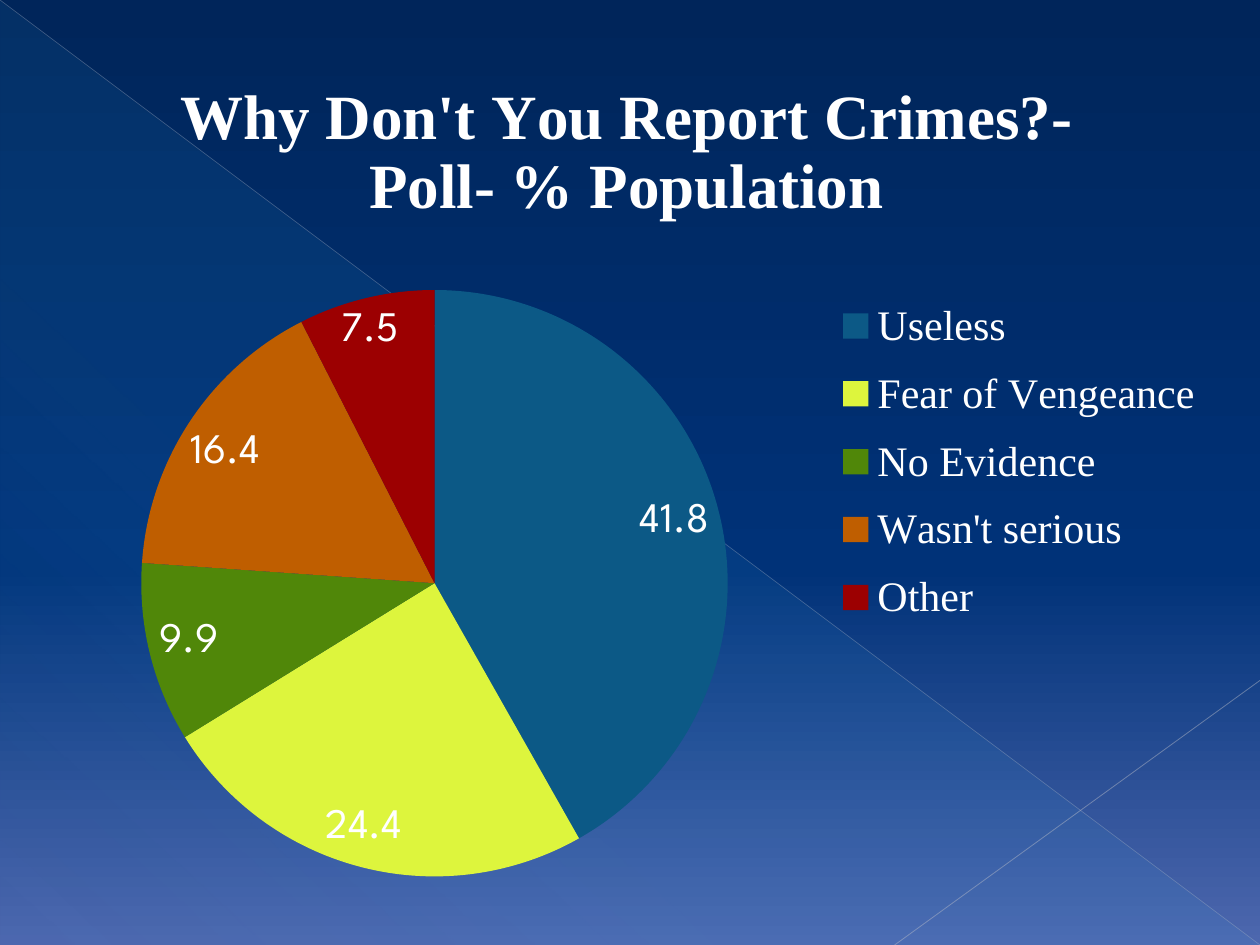
from dataclasses import dataclass
from typing import NamedTuple

from lxml.etree import SubElement
from pptx import Presentation
from pptx.chart.chart import Chart
from pptx.chart.data import CategoryChartData
from pptx.dml.color import RGBColor
from pptx.enum.chart import XL_CHART_TYPE, XL_LABEL_POSITION, XL_LEGEND_POSITION
from pptx.enum.shapes import MSO_CONNECTOR, MSO_SHAPE
from pptx.oxml.ns import qn
from pptx.slide import Slide
from pptx.util import Inches, Pt

WIDTH, HEIGHT = Inches(10), Inches(7.5)


@dataclass(frozen=True)
class Theme:
    text: str = "FFFFFF"
    body_font: str = "League Spartan"
    serif_font: str = "Times New Roman"
    title_size: int = 36
    label_size: int = 24
    base_size: int = 10


class Stop(NamedTuple):
    position: int
    color: str
    opacity: int = 100


class Ray(NamedTuple):
    """A thin line whose ends are shares of the slide."""
    start: tuple[float, float]
    end: tuple[float, float]
    color: str
    weight: float
    opacity: int


class Answer(NamedTuple):
    name: str
    percent: float
    color: str


class Area(NamedTuple):
    """A place given in shares of the chart; no size means automatic."""
    left: float
    top: float
    width: float | None = None
    height: float | None = None


THEME = Theme()
BACKGROUND = [Stop(0, "00255A"), Stop(60, "003278"), Stop(100, "4D67AE")]
TRIANGLE = [Stop(0, "38ABED", 10), Stop(70, "38ABED", 8), Stop(100, "38ABED", 1)]
RAYS = [
    Ray((0, 0), (1, 1), "B0B5C3", 0.39, 35),
    Ray((1, 0.72), (0.71, 1), "B9BDC9", 0.47, 45),
]
ANSWERS = [
    Answer("Useless", 41.8, "0C5986"),
    Answer("Fear of Vengeance", 24.4, "DDF53D"),
    Answer("No Evidence", 9.9, "508709"),
    Answer("Wasn't serious", 16.4, "BF5E00"),
    Answer("Other", 7.5, "9C0001"),
]
TITLE = "Why Don't You Report Crimes?- Poll- % Population"
TITLE_AREA = Area(0.11, 0.01)
PLOT_AREA = Area(0.08, 0.28, 0.51, 0.7)
LEGEND_AREA = Area(0.67, 0.27, 0.32, 0.43)


def add_opacity(color_element, opacity: int) -> None:
    if opacity < 100:
        SubElement(color_element, qn("a:alpha"), val=str(opacity * 1000))


def set_gradient(fill, stops: list[Stop], clockwise_angle: int) -> None:
    """Give a fill any number of stops, each with its own opacity."""
    fill.gradient()
    fill.gradient_angle = (360 - clockwise_angle) % 360
    # The stop collection has no public way to add stops.
    stop_list = fill.gradient_stops[0]._gs.getparent()
    for element in list(stop_list):
        stop_list.remove(element)
    for stop in stops:
        element = SubElement(stop_list, qn("a:gs"), pos=str(stop.position * 1000))
        color = SubElement(element, qn("a:srgbClr"), val=stop.color)
        add_opacity(color, stop.opacity)


def set_font(font, size: int, name: str, bold: bool = False) -> None:
    font.size = Pt(size)
    font.name = name
    font.bold = bold
    font.color.rgb = RGBColor.from_string(THEME.text)


def add_ray(slide: Slide, ray: Ray) -> None:
    (start_x, start_y), (end_x, end_y) = ray.start, ray.end
    connector = slide.shapes.add_connector(
        MSO_CONNECTOR.STRAIGHT,
        round(WIDTH * start_x), round(HEIGHT * start_y),
        round(WIDTH * end_x), round(HEIGHT * end_y),
    )
    connector.line.width = Pt(ray.weight)
    connector.line.color.rgb = RGBColor.from_string(ray.color)
    properties = connector._element.spPr
    add_opacity(properties.find(".//" + qn("a:srgbClr")), ray.opacity)
    SubElement(properties, qn("a:effectLst"))


def add_backdrop(slide: Slide) -> None:
    set_gradient(slide.background.fill, BACKGROUND, 90)
    triangle = slide.shapes.add_shape(MSO_SHAPE.RIGHT_TRIANGLE, 0, 0, WIDTH, HEIGHT)
    triangle.shadow.inherit = False
    triangle.line.fill.background()
    set_gradient(triangle.fill, TRIANGLE, 133)
    for ray in RAYS:
        add_ray(slide, ray)


def place(parent, area: Area, follows: str | None, inner: bool = False) -> None:
    """Put a chart part at an area; the layout goes after the named child."""
    for old in parent.findall(qn("c:layout")):
        parent.remove(old)
    layout = parent.makeelement(qn("c:layout"))
    parent.insert(0 if follows is None else parent.index(parent.find(qn(follows))) + 1, layout)
    manual = SubElement(layout, qn("c:manualLayout"))
    if inner:
        SubElement(manual, qn("c:layoutTarget"), val="inner")
    for tag in ("c:xMode", "c:yMode"):
        SubElement(manual, qn(tag), val="edge")
    for tag, share in zip(("c:x", "c:y", "c:w", "c:h"), area):
        if share is not None:
            SubElement(manual, qn(tag), val=str(share))


def style_text(chart: Chart) -> None:
    set_font(chart.font, THEME.base_size, THEME.body_font)
    chart.has_title = True
    title = chart.chart_title
    title.include_in_layout = False
    title.text_frame.text = TITLE
    set_font(title.text_frame.paragraphs[0].runs[0].font,
             THEME.title_size, THEME.serif_font, bold=True)
    place(title._element, TITLE_AREA, "c:tx")

    chart.has_legend = True
    chart.legend.position = XL_LEGEND_POSITION.RIGHT
    chart.legend.include_in_layout = False
    set_font(chart.legend.font, THEME.label_size, THEME.serif_font)
    place(chart.legend._element, LEGEND_AREA, "c:legendPos")


def add_poll_chart(slide: Slide) -> None:
    data = CategoryChartData()
    data.categories = [answer.name for answer in ANSWERS]
    data.add_series("Series 1", [answer.percent for answer in ANSWERS])
    chart = slide.shapes.add_chart(
        XL_CHART_TYPE.PIE, Inches(0.31), Inches(0.44), Inches(9.37), Inches(6.65), data
    ).chart
    style_text(chart)

    plot = chart.plots[0]
    plot.vary_by_categories = True
    place(chart._chartSpace.chart.plotArea, PLOT_AREA, None, inner=True)
    for index, answer in enumerate(ANSWERS):
        point = plot.series[0].points[index]
        point.format.fill.solid()
        point.format.fill.fore_color.rgb = RGBColor.from_string(answer.color)
        point.format.line.fill.background()

    plot.has_data_labels = True
    labels = plot.data_labels
    labels.show_value = True
    labels.show_percentage = False
    labels.position = XL_LABEL_POSITION.BEST_FIT
    set_font(labels.font, THEME.label_size, THEME.body_font)


def main() -> None:
    presentation = Presentation()
    presentation.slide_width, presentation.slide_height = WIDTH, HEIGHT
    slide = presentation.slides.add_slide(presentation.slide_layouts[6])
    add_backdrop(slide)
    add_poll_chart(slide)
    presentation.save("out.pptx")


if __name__ == "__main__":
    main()
